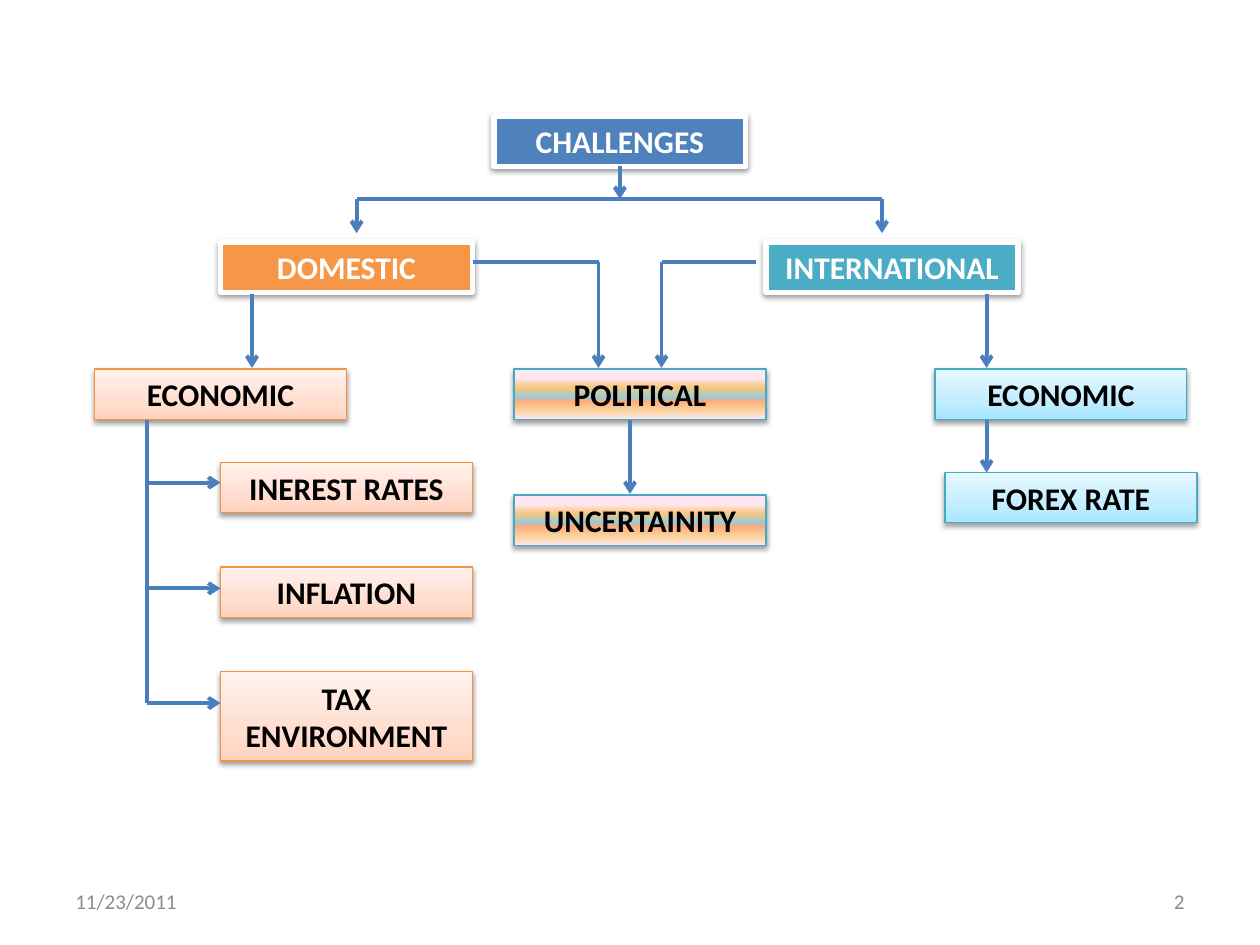
from lxml import etree
from pptx import Presentation
from pptx.dml.color import RGBColor
from pptx.enum.shapes import MSO_CONNECTOR, MSO_SHAPE
from pptx.enum.text import MSO_ANCHOR, MSO_AUTO_SIZE, PP_ALIGN
from pptx.oxml.ns import qn
from pptx.util import Inches, Pt

RECTANGLE = MSO_SHAPE.RECTANGLE
STRAIGHT = MSO_CONNECTOR.STRAIGHT
MIDDLE = MSO_ANCHOR.MIDDLE
GROW = MSO_AUTO_SIZE.SHAPE_TO_FIT_TEXT
LEFT, CENTER, RIGHT = PP_ALIGN.LEFT, PP_ALIGN.CENTER, PP_ALIGN.RIGHT

WHITE = RGBColor(0xFF, 0xFF, 0xFF)
BLACK = RGBColor(0x00, 0x00, 0x00)
GRAY = RGBColor(0x8C, 0x8C, 0x8C)
BLUE = RGBColor(0x4F, 0x81, 0xBD)
TEAL = RGBColor(0x4B, 0xAC, 0xC6)
ORANGE = RGBColor(0xF7, 0x96, 0x46)
ARROW_BLUE = RGBColor(0x4B, 0x7E, 0xBC)
TEAL_EDGE = RGBColor(0x46, 0xAA, 0xC5)
ORANGE_EDGE = RGBColor(0xF6, 0x92, 0x40)
PINK = RGBColor(0xFE, 0xE7, 0xF2)
AMBER = RGBColor(0xFA, 0xC7, 0x7D)
SKY = RGBColor(0x93, 0xCD, 0xDD)
SALMON = RGBColor(0xFB, 0xA9, 0x7D)
SAND = RGBColor(0xFB, 0xD4, 0x9C)

PEACH_STOPS = [(0, RGBColor(0xFF, 0xD2, 0xBD)), (35, RGBColor(0xFF, 0xDE, 0xD0)),
               (100, RGBColor(0xFF, 0xF2, 0xED))]
AQUA_STOPS = [(0, RGBColor(0xA7, 0xE6, 0xFF)), (35, RGBColor(0xC1, 0xED, 0xFF)),
              (100, RGBColor(0xE7, 0xF8, 0xFF))]
UPWARD, DOWNWARD = 90, 270
PEACH = {"stops": PEACH_STOPS, "angle": UPWARD, "edge": ORANGE_EDGE}
AQUA = {"stops": AQUA_STOPS, "angle": UPWARD, "edge": TEAL_EDGE}

BOX_WIDTH = 2
BOX_HEIGHT = 0.4


def striped(sky_position):
    """Return the striped style with its sky band at the given percentage."""
    stops = [(18, PINK), (36, AMBER), (sky_position, SKY), (61, SALMON), (82, SAND), (100, PINK)]
    return {"stops": stops, "angle": DOWNWARD, "edge": TEAL_EDGE}


def write_text(frame, text, size=18, color=BLACK, bold=True, align=CENTER):
    """Put one formatted paragraph into a text frame."""
    frame.word_wrap = True
    frame.vertical_anchor = MIDDLE
    para = frame.paragraphs[0]
    para.alignment = align
    span = para.add_run()
    span.text = text
    span.font.name = "Calibri"
    span.font.size = Pt(size)
    span.font.bold = bold
    span.font.color.rgb = color


def fill_gradient(box, stops, angle):
    """Fill a box with a linear gradient of percentage and colour pairs."""
    box.fill.gradient()
    box.fill.gradient_angle = angle
    stop_list = box._element.spPr.find(qn("a:gradFill")).find(qn("a:gsLst"))
    for old_stop in list(stop_list):
        stop_list.remove(old_stop)
    for position, color in stops:
        stop = etree.SubElement(stop_list, qn("a:gs"), pos=str(position * 1000))
        etree.SubElement(stop, qn("a:srgbClr"), val=str(color))


def add_shadow(box):
    """Give a box a soft shadow falling straight down."""
    box.shadow.inherit = False
    effects = box._element.spPr.find(qn("a:effectLst"))
    shadow = etree.SubElement(effects, qn("a:outerShdw"), blurRad=str(Pt(3.1)),
                              dist=str(Pt(1.6)), dir="5400000", rotWithShape="0")
    color = etree.SubElement(shadow, qn("a:srgbClr"), val=str(BLACK))
    etree.SubElement(color, qn("a:alpha"), val="38000")


def add_box(page, text, left, top, height=BOX_HEIGHT):
    """Add a shadowed rectangle ready for its fill and text."""
    box = page.shapes.add_shape(RECTANGLE, Inches(left), Inches(top),
                                Inches(BOX_WIDTH), Inches(height))
    add_shadow(box)
    box.text_frame.auto_size = GROW
    return box


def add_heading(page, text, left, top, color):
    """Add a solid box with a white frame."""
    box = add_box(page, text, left, top)
    box.fill.solid()
    box.fill.fore_color.rgb = color
    box.line.color.rgb = WHITE
    box.line.width = Pt(3)
    write_text(box.text_frame, text, color=WHITE)


def add_topic(page, text, left, top, style, height=BOX_HEIGHT):
    """Add a gradient box with a thin edge."""
    box = add_box(page, text, left, top, height)
    fill_gradient(box, style["stops"], style["angle"])
    box.line.color.rgb = style["edge"]
    box.line.width = Pt(0.75)
    write_text(box.text_frame, text)


def add_line(page, start, end, arrow=True):
    """Add a straight connector between two points."""
    line = page.shapes.add_connector(STRAIGHT, *map(Inches, start + end))
    line.line.color.rgb = ARROW_BLUE
    line.line.width = Pt(2.25)
    properties = line._element.spPr
    if arrow:
        etree.SubElement(properties.find(qn("a:ln")), qn("a:tailEnd"), type="arrow")
    etree.SubElement(properties, qn("a:effectLst"))


def add_root(page, left, top):
    """Place the top heading and the fork below it."""
    add_heading(page, "CHALLENGES", left, top, BLUE)
    middle, fork = left + BOX_WIDTH / 2, top + 0.66
    ends = (middle - 2.09, middle + 2.08)
    add_line(page, (ends[0], fork), (ends[1], fork), arrow=False)
    add_line(page, (middle, top + BOX_HEIGHT), (middle, fork))
    for end in ends:
        add_line(page, (end, fork), (end, fork + 0.27))


def add_domestic(page, left, top):
    """Place the domestic heading, its economic topic and the listed factors."""
    add_heading(page, "DOMESTIC", left, top, ORANGE)
    add_line(page, (left + 0.25, top + 0.41), (left + 0.25, top + 1))
    add_topic(page, "ECONOMIC", left - 1, top + 1.01, PEACH)
    trunk = left - 0.58
    add_line(page, (trunk, top + 1.41), (trunk, top + 3.66), arrow=False)
    factors = [("INEREST RATES", BOX_HEIGHT, 1.91), ("INFLATION", BOX_HEIGHT, 2.75),
               ("TAX ENVIRONMENT", 0.71, 3.66)]
    for row, (text, height, arrow_drop) in enumerate(factors):
        add_topic(page, text, left, top + 1.75 + row * 0.83, PEACH, height)
        add_line(page, (trunk, top + arrow_drop), (left, top + arrow_drop))


def add_international(page, left, top):
    """Place the international heading and its economic chain."""
    add_heading(page, "INTERNATIONAL", left, top, TEAL)
    add_topic(page, "ECONOMIC", left + 1.34, top + 1.01, AQUA)
    add_topic(page, "FOREX RATE", left + 1.42, top + 1.83, AQUA)
    for start, end in [(0.41, 1), (1.41, 1.83)]:
        add_line(page, (left + 1.75, top + start), (left + 1.75, top + end))


def add_political(page, left, top):
    """Place the shared political chain and the elbows leading into it."""
    add_topic(page, "POLITICAL", left, top, striped(58))
    add_topic(page, "UNCERTAINITY", left, top + 1, striped(55))
    middle, elbow = left + 0.92, top - 0.85
    for side, reach in [(-1, 1.25), (1, 1)]:
        turn = middle + side * 0.25
        add_line(page, (middle + side * reach, elbow), (turn, elbow), arrow=False)
        add_line(page, (turn, elbow), (turn, top - 0.01))
    add_line(page, (middle, top + BOX_HEIGHT), (middle, top + 0.99))


def add_footer(page, left, top, width):
    """Place the date and the page number at the two ends of the footer."""
    part_width = 2.33
    parts = [("11/23/2011", left, LEFT), ("2", left + width - part_width, RIGHT)]
    for text, part_left, align in parts:
        box = page.shapes.add_textbox(Inches(part_left), Inches(top),
                                      Inches(part_width), Inches(0.4))
        write_text(box.text_frame, text, size=12, color=GRAY, bold=False, align=align)


def main():
    """Build the deck and save it."""
    deck = Presentation()
    deck.slide_width, deck.slide_height = Inches(10), Inches(7.5)
    page = deck.slides.add_slide(deck.slide_layouts[6])
    add_root(page, 3.92, 0.92)
    add_domestic(page, 1.75, 1.92)
    add_international(page, 6.08, 1.92)
    add_political(page, 4.08, 2.93)
    add_footer(page, 0.5, 6.95, 9)
    deck.save("out.pptx")


if __name__ == "__main__":
    main()
